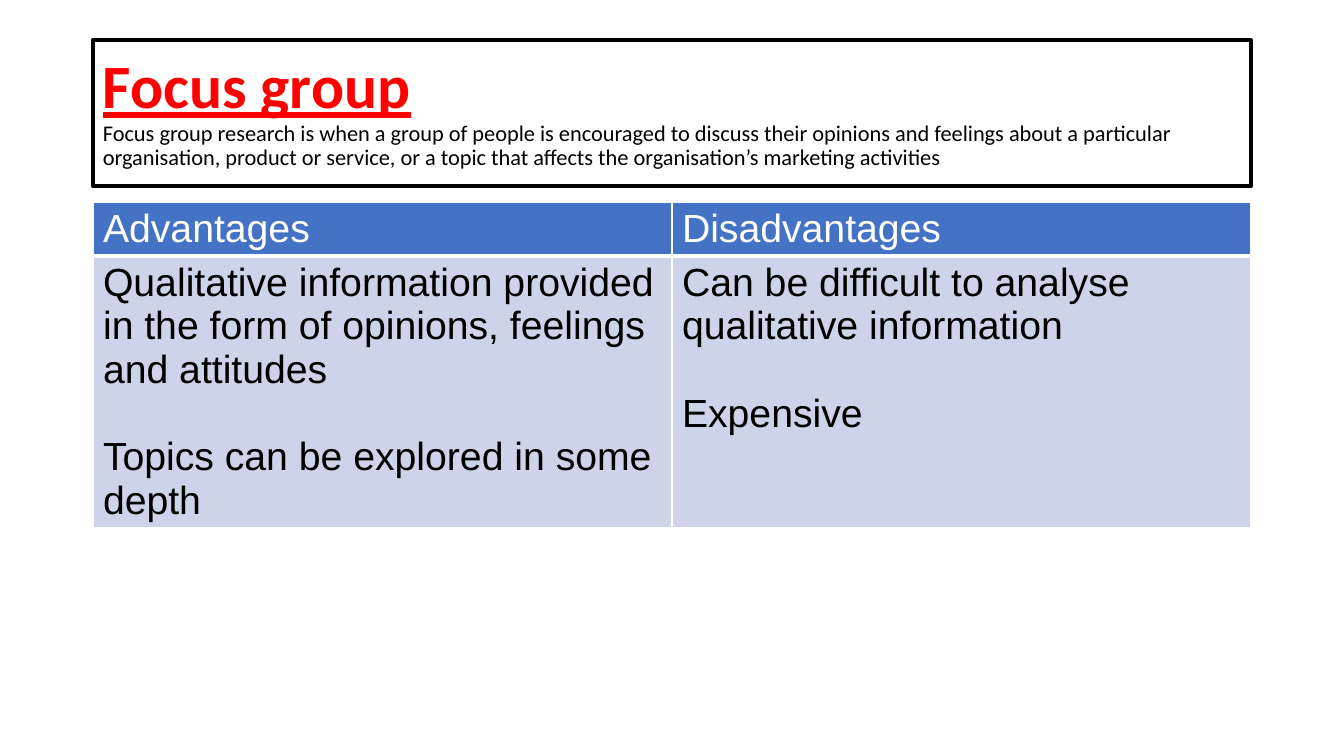
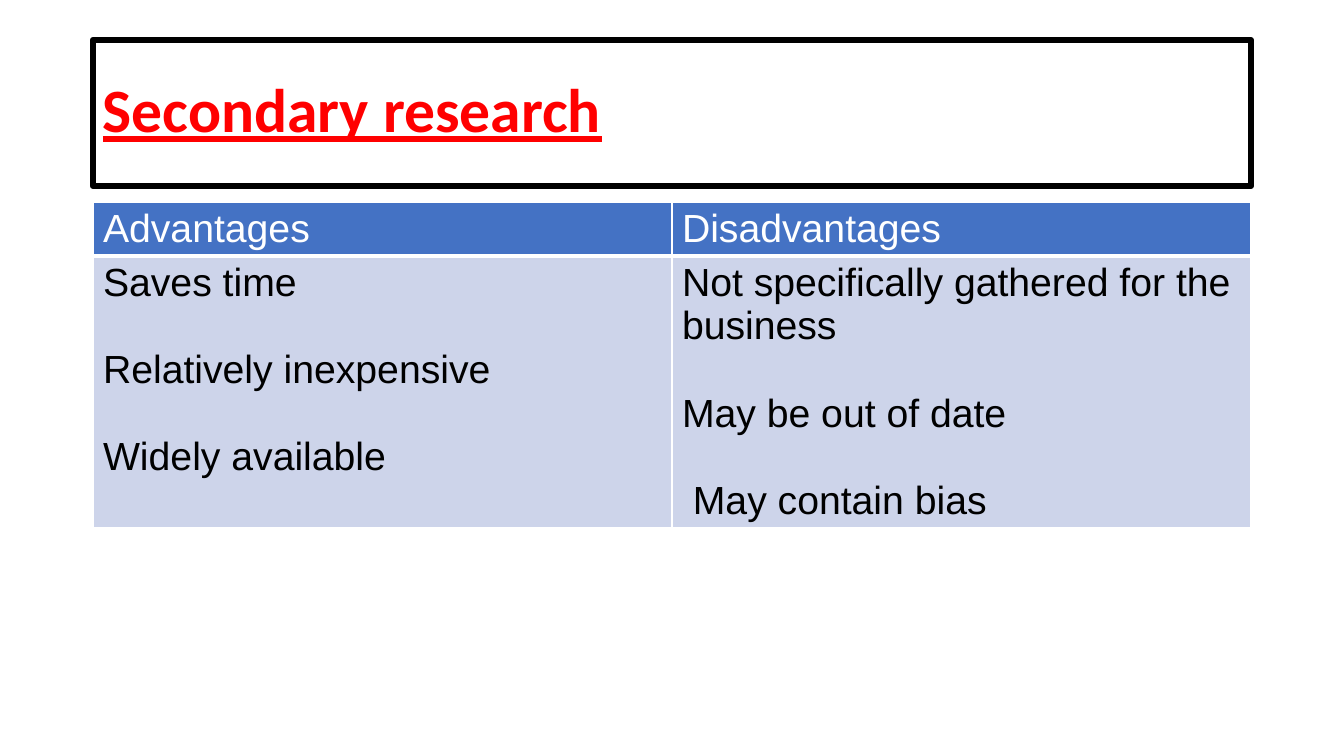
from dataclasses import dataclass

from lxml.etree import SubElement
from pptx import Presentation
from pptx.dml.color import RGBColor
from pptx.enum.shapes import MSO_SHAPE
from pptx.enum.text import MSO_ANCHOR, PP_ALIGN
from pptx.oxml import parse_xml
from pptx.oxml.ns import nsdecls, qn
from pptx.util import Emu, Pt

# Content
HEADINGS = ("Advantages", "Disadvantages")
TOPICS = [
    {
        "title": "Focus group",
        "summary": "Focus group research is when a group of people is encouraged to discuss "
                   "their opinions and feelings about a particular organisation, product or "
                   "service, or a topic that affects the organisation’s marketing activities",
        "outline": 3,
        "points": (
            ("Qualitative information provided in the form of opinions, feelings and attitudes",
             "Topics can be explored in some depth"),
            ("Can be difficult to analyse qualitative information", "Expensive"),
        ),
    },
    {
        "title": "Secondary research",
        "summary": "",
        "outline": 4.5,
        "points": (
            ("Saves time", "Relatively inexpensive", "Widely available"),
            ("Not specifically gathered for the business", "May be out of date",
             " May contain bias"),
        ),
    },
]


@dataclass(frozen=True)
class Theme:
    red: str = "FF0000"
    black: str = "000000"
    white: str = "FFFFFF"
    header: str = "4472C4"
    body: str = "CDD4EA"
    title_font: str = "Calibri"
    table_font: str = "Arial"
    title_size: int = 44
    summary_size: int = 16
    table_size: int = 28
    point_gap: int = 31


THEME = Theme()

# Layout in px
SLIDE_W, SLIDE_H = 1344, 756
LEFT, WIDTH = 93, 1158
TITLE_TOP, TITLE_H = 40, 146
TABLE_TOP = 202
ROW_HEIGHTS = (53, 272)


def px(length):
    return Emu(round(length * 914400 / 100.8))


def write(frame, text, *, size, font, color, bold=False, underline=False,
          line=1.0, before=0):
    """Add one paragraph, using the empty first one if there is one."""
    first = frame.paragraphs[0]
    para = frame.add_paragraph() if first.runs else first
    para.alignment = PP_ALIGN.LEFT
    para.line_spacing = line
    para.space_before = Pt(before)
    span = para.add_run()
    span.text = text
    span.font.size = Pt(size)
    span.font.name = font
    span.font.bold = bold
    span.font.underline = underline
    span.font.color.rgb = RGBColor.from_string(color)


def add_title(page, topic):
    box = page.shapes.add_shape(MSO_SHAPE.RECTANGLE, px(LEFT), px(TITLE_TOP),
                                px(WIDTH), px(TITLE_H))
    box.shadow.inherit = False
    box.fill.background()
    box.line.color.rgb = RGBColor.from_string(THEME.black)
    box.line.width = Pt(topic["outline"])
    SubElement(box.line._get_or_add_ln(), qn("a:round"))
    frame = box.text_frame
    frame.word_wrap = True
    frame.vertical_anchor = MSO_ANCHOR.MIDDLE
    write(frame, topic["title"], size=THEME.title_size, font=THEME.title_font,
          color=THEME.red, bold=True, underline=True, line=0.9)
    if topic["summary"]:
        write(frame, topic["summary"], size=THEME.summary_size, font=THEME.title_font,
              color=THEME.black, line=0.9)


def set_borders(cell, **widths):
    properties = cell._tc.get_or_add_tcPr()
    for position, side in enumerate("LRTB"):
        width = Pt(widths.get(side, 1))
        properties.insert(position, parse_xml(
            f'<a:ln{side} {nsdecls("a")} w="{width}"><a:solidFill>'
            f'<a:srgbClr val="{THEME.white}"/></a:solidFill></a:ln{side}>'))


def fill_cell(cell, lines, fill, color, **borders):
    cell.fill.solid()
    cell.fill.fore_color.rgb = RGBColor.from_string(fill)
    set_borders(cell, **borders)
    for index, text in enumerate(lines):
        write(cell.text_frame, text, size=THEME.table_size, font=THEME.table_font,
              color=color, before=THEME.point_gap if index else 0)


def add_comparison(page, topic):
    table = page.shapes.add_table(len(ROW_HEIGHTS), len(HEADINGS), px(LEFT), px(TABLE_TOP),
                                  px(WIDTH), px(sum(ROW_HEIGHTS))).table
    table.horz_banding = False
    for row, height in zip(table.rows, ROW_HEIGHTS):
        row.height = px(height)
    for column, (heading, points) in enumerate(zip(HEADINGS, topic["points"])):
        table.columns[column].width = px(WIDTH / len(HEADINGS))
        fill_cell(table.cell(0, column), [heading], THEME.header, THEME.white, B=3)
        fill_cell(table.cell(1, column), points, THEME.body, THEME.black, T=3)


def main():
    deck = Presentation()
    deck.slide_width, deck.slide_height = px(SLIDE_W), px(SLIDE_H)
    for topic in TOPICS:
        page = deck.slides.add_slide(deck.slide_layouts[6])
        add_title(page, topic)
        add_comparison(page, topic)
    deck.save("out.pptx")


if __name__ == "__main__":
    main()
